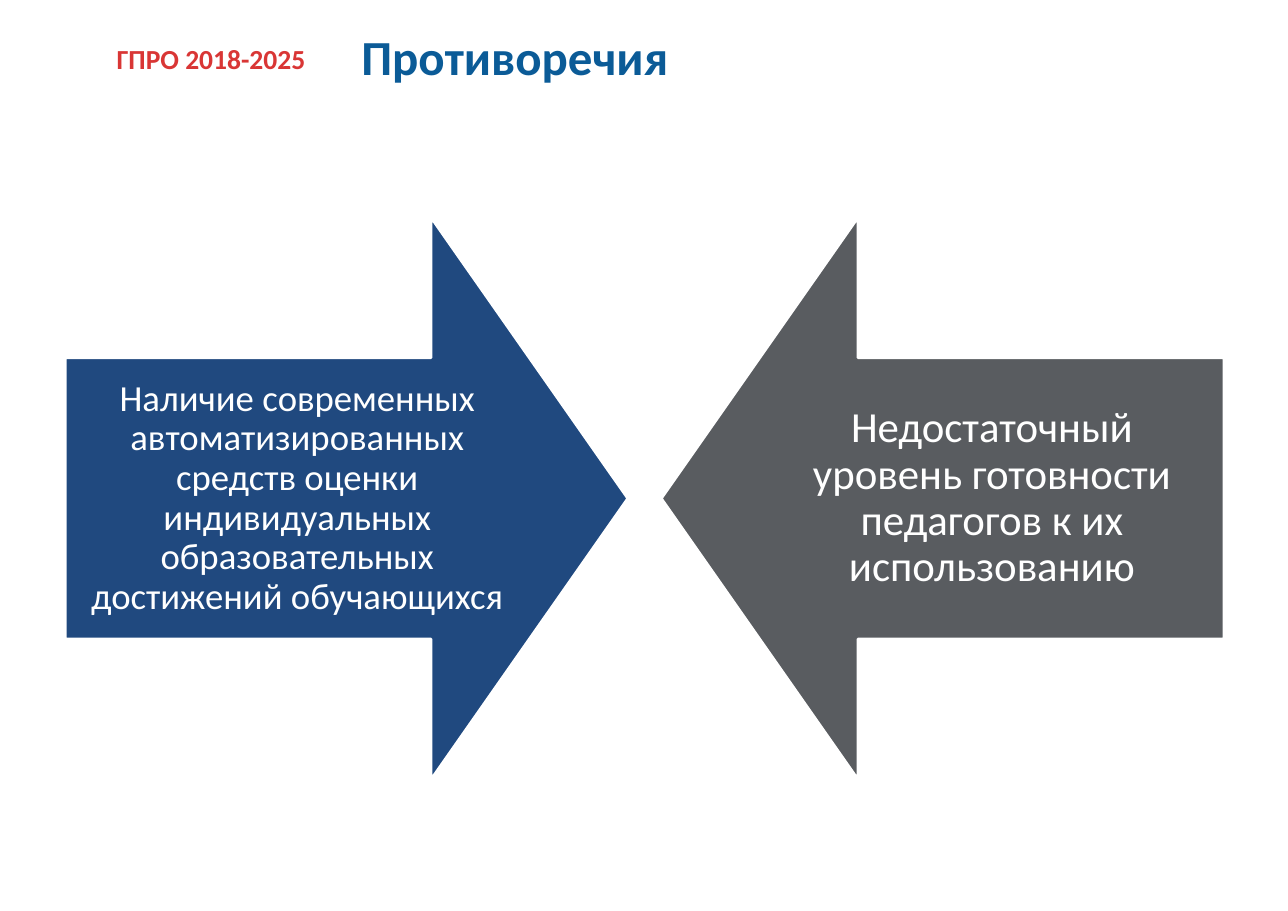
import pptx
import pptx.util
from pptx.dml.color import RGBColor
from pptx.enum.shapes import MSO_SHAPE
from pptx.enum.text import MSO_ANCHOR, PP_ALIGN
from pptx.util import Inches

RED = RGBColor(0xD9, 0x36, 0x35)
TITLE_BLUE = RGBColor(0x0B, 0x5B, 0x97)
ARROW_BLUE = RGBColor(0x20, 0x49, 0x7F)
ARROW_GRAY = RGBColor(0x59, 0x5C, 0x60)
WHITE = RGBColor(0xFF, 0xFF, 0xFF)

ARROW_SIZE = 5.11
ARROW_TOP = 1.97


def write_text(shape, text, size, color, bold=False):
    """Fill the shape with one paragraph, centred vertically."""
    shape.text_frame.text = text
    shape.text_frame.vertical_anchor = MSO_ANCHOR.MIDDLE
    paragraph = shape.text_frame.paragraphs[0]
    font = paragraph.runs[0].font
    font.name = "Calibri"
    font.size = pptx.util.Pt(size)
    font.bold = bold
    font.color.rgb = color
    return paragraph


presentation = pptx.Presentation()
presentation.slide_width = Inches(11.69)
presentation.slide_height = Inches(8.27)
slide = presentation.slides.add_slide(presentation.slide_layouts[6])

program_label = slide.shapes.add_textbox(Inches(0.96), Inches(0.33), Inches(1.92), Inches(0.4))
program_label.text_frame.word_wrap = False
write_text(program_label, "ГПРО 2018-2025", 18, RED, bold=True)

title = slide.shapes.add_textbox(Inches(3.17), Inches(0), Inches(8.35), Inches(1.02))
title.text_frame.word_wrap = True
title.text_frame.margin_left = title.text_frame.margin_right = Inches(0.11)
write_text(title, "Противоречия", 32, TITLE_BLUE, bold=True)

arrows = [
    (MSO_SHAPE.RIGHT_ARROW, 0.59, ARROW_BLUE, 24, 0.19,
     "Наличие современных автоматизированных средств оценки "
     "индивидуальных образовательных достижений обучающихся"),
    (MSO_SHAPE.LEFT_ARROW, 6, ARROW_GRAY, 28, 0.22,
     "Недостаточный уровень готовности педагогов к их использованию"),
]
for arrow_type, left, color, size, margin, text in arrows:
    arrow = slide.shapes.add_shape(
        arrow_type, Inches(left), Inches(ARROW_TOP), Inches(ARROW_SIZE), Inches(ARROW_SIZE))
    arrow.adjustments[0] = 0.5
    arrow.adjustments[1] = 0.35
    arrow.shadow.inherit = False
    arrow.fill.solid()
    arrow.fill.fore_color.rgb = color
    arrow.line.color.rgb = WHITE
    arrow.line.width = pptx.util.Pt(2)

    frame = arrow.text_frame
    frame.word_wrap = True
    frame.margin_left = frame.margin_right = Inches(margin)
    frame.margin_top = frame.margin_bottom = Inches(margin)
    paragraph = write_text(arrow, text, size, WHITE)
    paragraph.alignment = PP_ALIGN.CENTER
    paragraph.line_spacing = 0.9

presentation.save("out.pptx")
